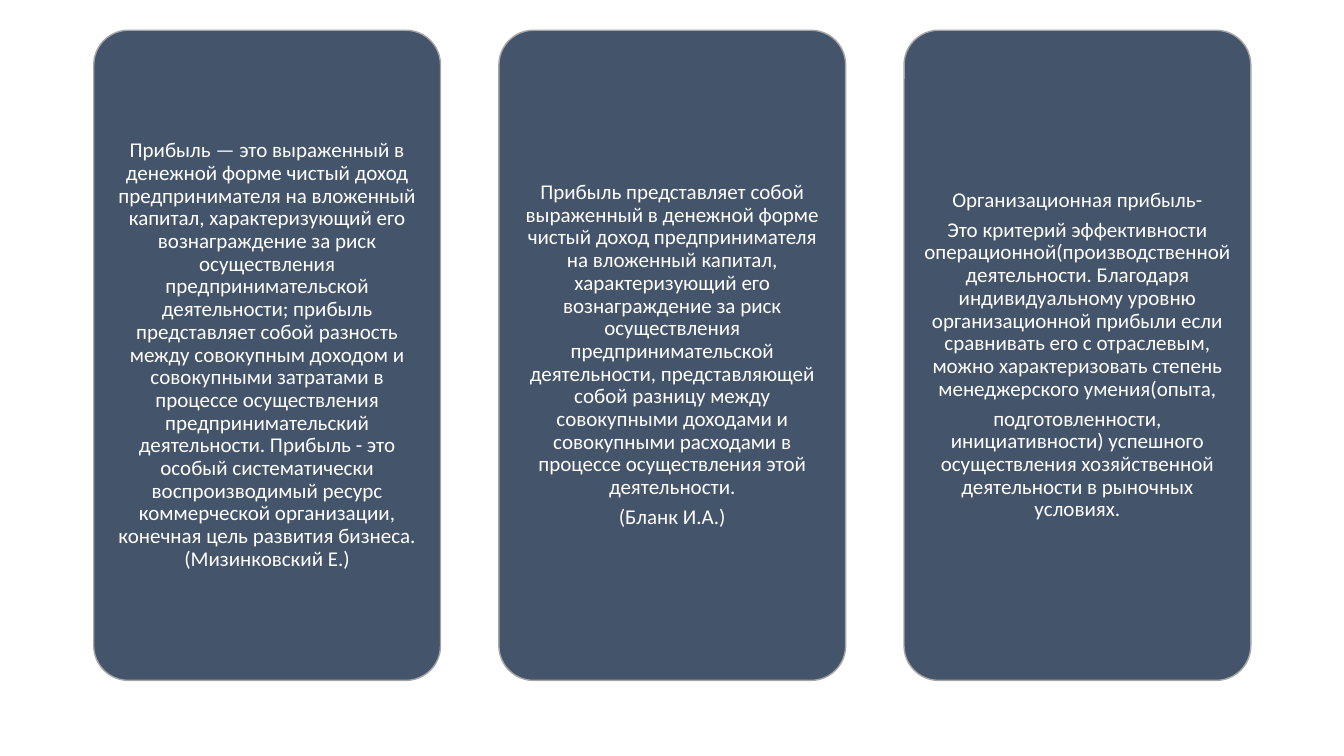
import pptx
import pptx.dml.color
import pptx.enum.shapes
import pptx.enum.text
import pptx.util

Pt = pptx.util.Pt
SLATE = pptx.dml.color.RGBColor(0x44, 0x54, 0x6A)
GREY = pptx.dml.color.RGBColor(0xA5, 0xA5, 0xA5)
WHITE = pptx.dml.color.RGBColor(0xFF, 0xFF, 0xFF)

CARD_LEFT, CARD_TOP = 67, 21.6
CARD_WIDTH, CARD_HEIGHT = 247.7, 464.4
CARD_STEP = 289.4

FRAME_FORMAT = {
    "word_wrap": True,
    "vertical_anchor": pptx.enum.text.MSO_ANCHOR.MIDDLE,
    "margin_left": Pt(4.5),
    "margin_top": Pt(4.5),
    "margin_right": Pt(4.5),
    "margin_bottom": Pt(4.5),
}
PARAGRAPH_FORMAT = {
    "alignment": pptx.enum.text.PP_ALIGN.CENTER,
    "line_spacing": 0.9,
    "space_after": Pt(5.25),
}
FONT_FORMAT = {"name": "Calibri", "size": Pt(15)}

DEFINITIONS = [
    [
        "Прибыль — это выраженный в денежной форме чистый доход "
        "предпринимателя на вложенный капитал, характеризующий его "
        "вознаграждение за риск осуществления предпринимательской "
        "деятельности; прибыль представляет собой разность между "
        "совокупным доходом и совокупными затратами в процессе "
        "осуществления предпринимательский деятельности. Прибыль - это "
        "особый систематически воспроизводимый ресурс коммерческой "
        "организации, конечная цель развития бизнеса.(Мизинковский Е.)",
    ],
    [
        "Прибыль представляет собой выраженный в денежной форме чистый "
        "доход предпринимателя на вложенный капитал, характеризующий его "
        "вознаграждение за риск осуществления предпринимательской "
        "деятельности, представляющей собой разницу между совокупными "
        "доходами и совокупными расходами в процессе осуществления этой "
        "деятельности.",
        "(Бланк И.А.)",
    ],
    [
        "Организационная прибыль-",
        "Это критерий эффективности операционной(производственной "
        "деятельности. Благодаря индивидуальному уровню организационной "
        "прибыли если сравнивать его с отраслевым, можно характеризовать "
        "степень менеджерского умения(опыта,",
        "подготовленности, инициативности) успешного осуществления "
        "хозяйственной деятельности в рыночных условиях.",
    ],
]


def apply_format(target, values):
    for name, value in values.items():
        setattr(target, name, value)


def write_paragraphs(frame, texts):
    apply_format(frame, FRAME_FORMAT)
    for index, text in enumerate(texts):
        para = frame.add_paragraph() if index else frame.paragraphs[0]
        apply_format(para, PARAGRAPH_FORMAT)
        span = para.add_run()
        span.text = text
        apply_format(span.font, FONT_FORMAT)
        span.font.color.rgb = WHITE


def add_card(page, left, texts):
    card = page.shapes.add_shape(
        pptx.enum.shapes.MSO_SHAPE.ROUNDED_RECTANGLE,
        Pt(left), Pt(CARD_TOP), Pt(CARD_WIDTH), Pt(CARD_HEIGHT),
    )
    card.adjustments[0] = 0.1
    card.shadow.inherit = False
    card.fill.solid()
    card.fill.fore_color.rgb = SLATE
    card.line.color.rgb = GREY
    card.line.width = Pt(1)
    write_paragraphs(card.text_frame, texts)


def main():
    deck = pptx.Presentation()
    deck.slide_width, deck.slide_height = Pt(960), Pt(540)
    page = deck.slides.add_slide(deck.slide_layouts[6])
    for column, texts in enumerate(DEFINITIONS):
        add_card(page, CARD_LEFT + column * CARD_STEP, texts)
    deck.save("out.pptx")


if __name__ == "__main__":
    main()
